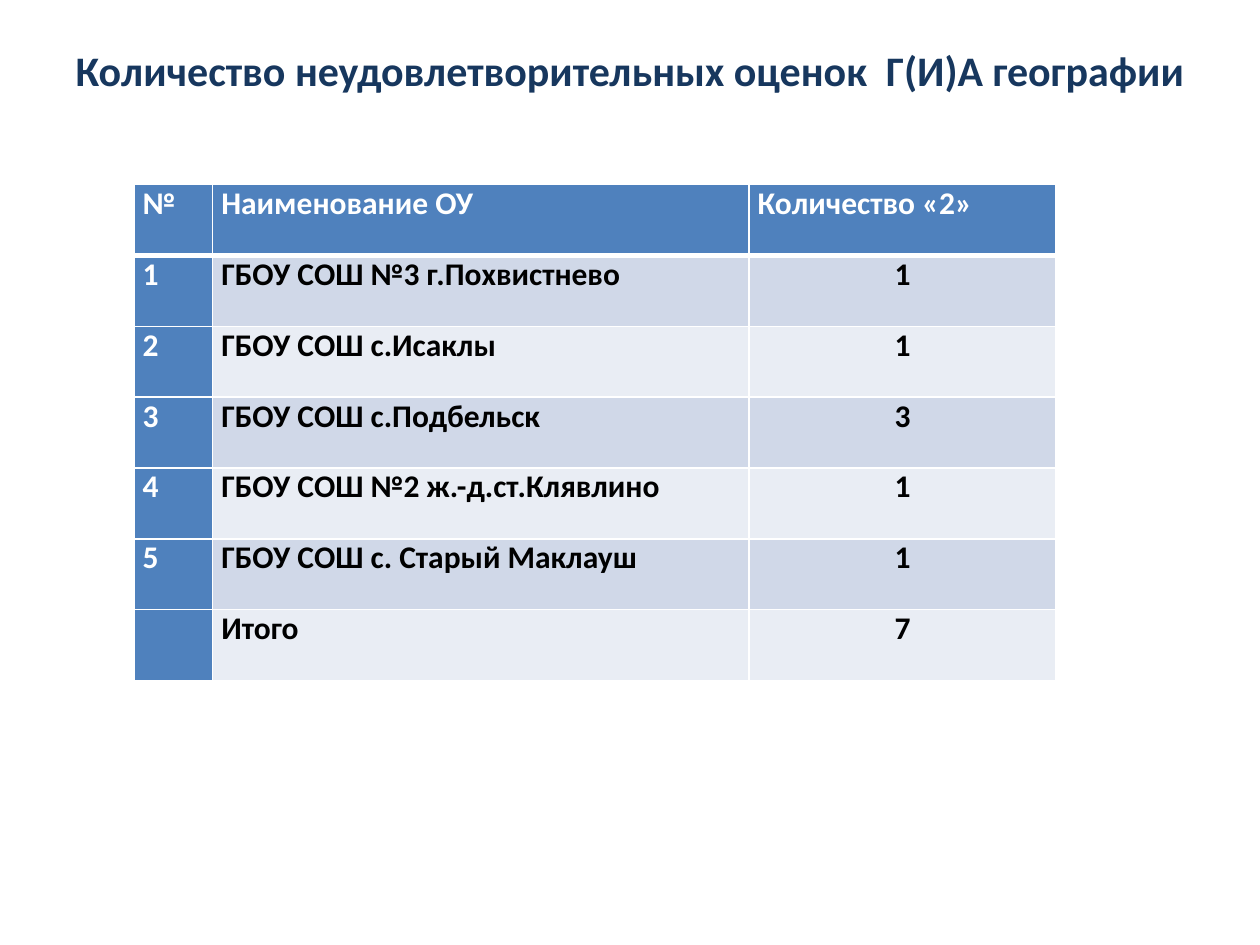
"""Build a slide with a table of unsatisfactory geography exam marks by school."""
from lxml import etree
from pptx import Presentation
from pptx.dml.color import RGBColor
from pptx.enum.text import MSO_ANCHOR, PP_ALIGN
from pptx.oxml.ns import qn
from pptx.util import Pt

LEFT, CENTER = PP_ALIGN.LEFT, PP_ALIGN.CENTER
TOP = MSO_ANCHOR.TOP
FONT = "Calibri"
COLORS = {
    "title": "17375E",
    "accent": "4F81BD",
    "odd": "D0D8E8",
    "even": "E9EDF4",
    "white": "FFFFFF",
    "black": "000000",
}
TITLE = "Количество неудовлетворительных оценок  Г(И)А географии"
HEADER = ("№", "Наименование ОУ", "Количество «2»")
SCHOOLS = [
    ("ГБОУ СОШ №3 г.Похвистнево", 1),
    ("ГБОУ СОШ с.Исаклы", 1),
    ("ГБОУ СОШ с.Подбельск", 3),
    ("ГБОУ СОШ №2 ж.-д.ст.Клявлино", 1),
    ("ГБОУ СОШ с. Старый Маклауш", 1),
]
COLUMN_WIDTHS = (45, 306.5, 175.5)
ROW_HEIGHT = 40.5


def add_run(paragraph, text, size, color, align):
    paragraph.alignment = align
    run = paragraph.add_run()
    run.text = text
    run.font.name = FONT
    run.font.size = Pt(size)
    run.font.bold = True
    run.font.color.rgb = RGBColor.from_string(COLORS[color])


def add_title(slide):
    title = slide.shapes.add_textbox(Pt(36), Pt(21.6), Pt(648), Pt(90))
    frame = title.text_frame
    frame.word_wrap = True
    frame.vertical_anchor = TOP
    frame.margin_left = frame.margin_right = 0
    add_run(frame.paragraphs[0], TITLE, 24, "title", CENTER)


def set_borders(cell, widths):
    properties = cell._tc.get_or_add_tcPr()
    for position, (side, width) in enumerate(widths.items()):
        line = etree.Element(qn(f"a:ln{side}"), w=str(Pt(width)))
        fill = etree.SubElement(line, qn("a:solidFill"))
        etree.SubElement(fill, qn("a:srgbClr"), val=COLORS["white"])
        properties.insert(position, line)


def fill_cell(cell, text, row, column):
    accented = row == 0 or column == 0
    background = "accent" if accented else ("odd" if row % 2 else "even")
    cell.fill.solid()
    cell.fill.fore_color.rgb = RGBColor.from_string(COLORS[background])
    cell.margin_left = cell.margin_right = Pt(5)
    cell.margin_top = cell.margin_bottom = 0
    set_borders(cell, {"L": 1, "R": 1, "T": 3 if row == 1 else 1, "B": 3 if row == 0 else 1})
    if text:
        align = CENTER if row > 0 and column == 2 else LEFT
        add_run(cell.text_frame.paragraphs[0], text, 18, "white" if accented else "black", align)


def add_marks_table(slide):
    numbered = [(str(i), name, str(count)) for i, (name, count) in enumerate(SCHOOLS, 1)]
    total = ("", "Итого", str(sum(count for _, count in SCHOOLS)))
    rows = [HEADER, *numbered, total]
    marks = slide.shapes.add_table(
        len(rows), len(HEADER), Pt(76.5), Pt(105.5),
        Pt(sum(COLUMN_WIDTHS)), Pt(ROW_HEIGHT * len(rows)),
    ).table
    for column, width in zip(marks.columns, COLUMN_WIDTHS):
        column.width = Pt(width)
    for r, values in enumerate(rows):
        marks.rows[r].height = Pt(ROW_HEIGHT)
        for c, text in enumerate(values):
            fill_cell(marks.cell(r, c), text, r, c)


def main():
    presentation = Presentation()
    presentation.slide_width, presentation.slide_height = Pt(720), Pt(540)
    slide = presentation.slides.add_slide(presentation.slide_layouts[6])
    add_title(slide)
    add_marks_table(slide)
    presentation.save("out.pptx")


if __name__ == "__main__":
    main()
